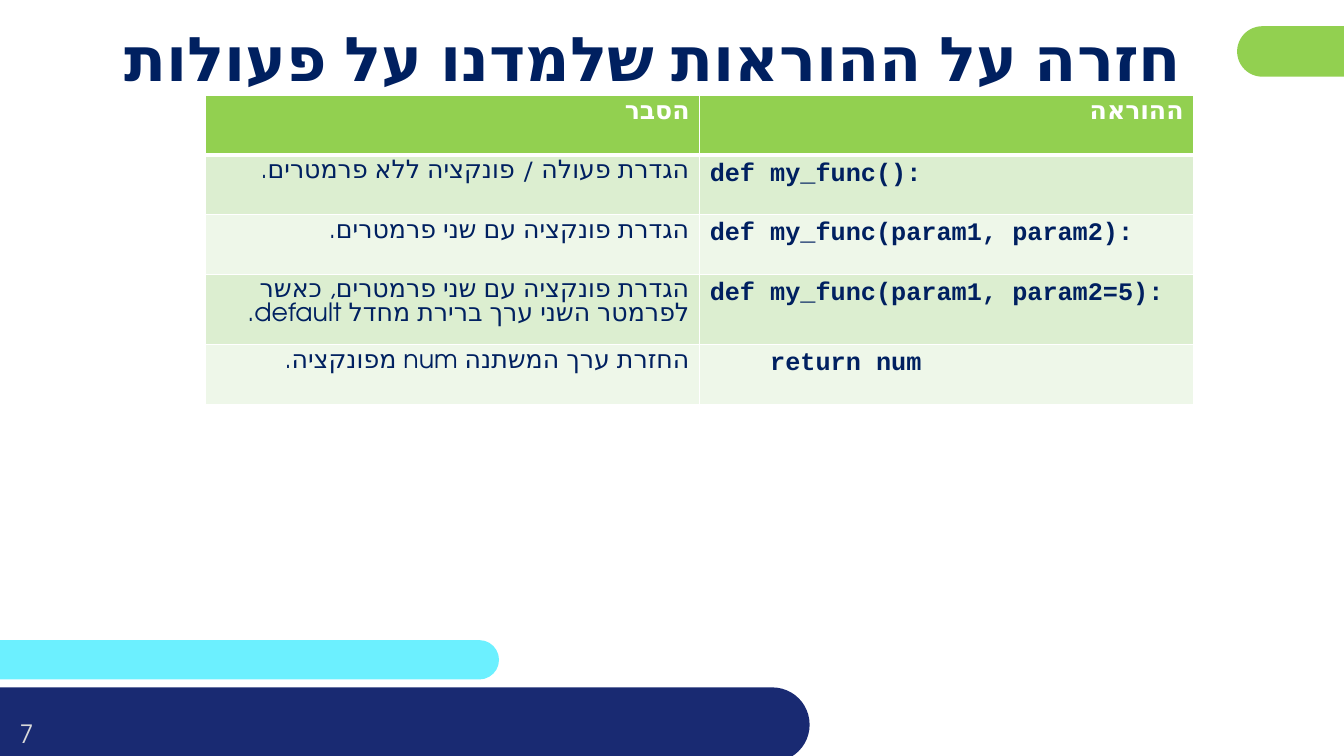
import dataclasses

import pptx
import pptx.dml.color
import pptx.enum.shapes
import pptx.enum.text
import pptx.oxml
import pptx.oxml.ns
import pptx.util

RGBColor = pptx.dml.color.RGBColor
ALIGN = pptx.enum.text.PP_ALIGN

WHITE = RGBColor(0xFF, 0xFF, 0xFF)
NAVY = RGBColor(0x00, 0x20, 0x60)
INDIGO = RGBColor(0x19, 0x2A, 0x72)
CYAN = RGBColor(0x6C, 0xF0, 0xFF)
GREEN = RGBColor(0x92, 0xD0, 0x50)
PALE_GREEN = RGBColor(0xDC, 0xEE, 0xD0)
PALEST_GREEN = RGBColor(0xEE, 0xF7, 0xE9)
LIGHT_GREY = RGBColor(0xD9, 0xD9, 0xD9)

SANS = "TeX Gyre Adventor"
MONO = "Courier New"
WIDTH = pptx.util.Inches(13.33)
HEIGHT = pptx.util.Inches(7.5)
CODE_INDENT = 4.5  # four monospaced characters, percent of slide width


@dataclasses.dataclass(frozen=True)
class Box:
    """A rectangle in percent of the slide's width and height."""
    left: float
    top: float
    width: float
    height: float

    def emu(self) -> tuple[int, int, int, int]:
        return (across(self.left), down(self.top),
                across(self.width), down(self.height))


@dataclasses.dataclass(frozen=True)
class Pill:
    box: Box
    color: RGBColor


@dataclasses.dataclass(frozen=True)
class Style:
    color: RGBColor
    size: float = 18
    font: str = SANS
    bold: bool = False
    align: ALIGN = ALIGN.RIGHT
    rtl: bool = True


@dataclasses.dataclass(frozen=True)
class Command:
    explanation: str
    code: str
    level: int = 0


PILLS = [
    Pill(Box(-1.95, 84.67, 39.08, 5.2), CYAN),
    Pill(Box(92.05, 3.47, 14.03, 6.67), GREEN),
    Pill(Box(-3.15, 90.93, 63.39, 9.87), INDIGO),
]
NUMBER_BOX = Box(-1.35, 93.2, 6.68, 7.6)
TITLE_BOX = Box(8.4, 2.27, 80.42, 10.53)
TABLE_BOX = Box(15.3, 12.67, 73.52, 39.33)

NUMBER = Style(LIGHT_GREY, align=ALIGN.CENTER, rtl=False)
TITLE = Style(NAVY, size=44, bold=True, align=ALIGN.CENTER)
HEADER = Style(WHITE, bold=True)
BODY = Style(NAVY)
CODE = Style(NAVY, font=MONO, bold=True, align=ALIGN.LEFT, rtl=False)

HEADINGS = ("הסבר", "ההוראה")
COMMANDS = [
    Command("הגדרת פעולה / פונקציה ללא פרמטרים.", "def my_func():"),
    Command("הגדרת פונקציה עם שני פרמטרים.", "def my_func(param1, param2):"),
    Command("הגדרת פונקציה עם שני פרמטרים, כאשר לפרמטר השני ערך ברירת מחדל default.",
            "def my_func(param1, param2=5):"),
    Command("החזרת ערך המשתנה num מפונקציה.", "return num", level=1),
]


def across(percent: float) -> int:
    return round(WIDTH * percent / 100)


def down(percent: float) -> int:
    return round(HEIGHT * percent / 100)


def write(tf, text: str, style: Style, level: int = 0) -> None:
    p = tf.paragraphs[0]
    p.alignment = style.align
    pPr = p._p.get_or_add_pPr()
    if style.rtl:
        pPr.set("rtl", "1")
    if level:
        pPr.set("marL", str(across(level * CODE_INDENT)))
    r = p.add_run()
    r.text = text
    formats = {"size": pptx.util.Pt(style.size), "bold": style.bold, "name": style.font}
    for name, value in formats.items():
        setattr(r.font, name, value)
    r.font.color.rgb = style.color
    rPr = r._r.get_or_add_rPr()
    rPr.set("lang", "he-IL" if style.rtl else "en-US")
    cs = pptx.oxml.parse_xml(f'<a:cs {pptx.oxml.ns.nsdecls("a")} typeface="{style.font}"/>')
    rPr.find(pptx.oxml.ns.qn("a:latin")).addnext(cs)


def add_pill(s, pill: Pill) -> None:
    sp = s.shapes.add_shape(pptx.enum.shapes.MSO_SHAPE.ROUNDED_RECTANGLE, *pill.box.emu())
    sp.adjustments[0] = 0.5
    sp.shadow.inherit = False
    sp.fill.solid()
    sp.fill.fore_color.rgb = pill.color
    sp.line.fill.background()


def add_text(s, box: Box, text: str, style: Style) -> None:
    tf = s.shapes.add_textbox(*box.emu()).text_frame
    inset = pptx.util.Inches(0.04)
    formats = {"word_wrap": True, "margin_left": inset, "margin_right": inset,
               "margin_top": 0, "margin_bottom": 0,
               "vertical_anchor": pptx.enum.text.MSO_ANCHOR.MIDDLE}
    for name, value in formats.items():
        setattr(tf, name, value)
    write(tf, text, style)


def set_borders(cell, top: float, bottom: float) -> None:
    """Draw white cell borders with widths in points, ahead of the fill."""
    tcPr = cell._tc.get_or_add_tcPr()
    widths = {"lnL": 1, "lnR": 1, "lnT": top, "lnB": bottom}
    for i, (side, width) in enumerate(widths.items()):
        tcPr.insert(i, pptx.oxml.parse_xml(
            f'<a:{side} {pptx.oxml.ns.nsdecls("a")} w="{pptx.util.Pt(width)}">'
            f'<a:solidFill><a:srgbClr val="{WHITE}"/></a:solidFill></a:{side}>'))


def fill_cell(cell, text: str, style: Style, fill: RGBColor, row: int, level: int = 0) -> None:
    write(cell.text_frame, text, style, level)
    cell.fill.solid()
    cell.fill.fore_color.rgb = fill
    set_borders(cell, top=3 if row == 1 else 1, bottom=3 if row == 0 else 1)


def add_command_table(s) -> None:
    rows = len(COMMANDS) + 1
    table = s.shapes.add_table(rows, len(HEADINGS), *TABLE_BOX.emu()).table
    for col, heading in enumerate(HEADINGS):
        fill_cell(table.cell(0, col), heading, HEADER, GREEN, 0)
    for row, command in enumerate(COMMANDS, start=1):
        fill = PALE_GREEN if row % 2 else PALEST_GREEN
        fill_cell(table.cell(row, 0), command.explanation, BODY, fill, row)
        fill_cell(table.cell(row, 1), command.code, CODE, fill, row, command.level)


def main() -> None:
    prs = pptx.Presentation()
    prs.slide_width, prs.slide_height = WIDTH, HEIGHT
    s = prs.slides.add_slide(prs.slide_layouts[6])
    for pill in PILLS:
        add_pill(s, pill)
    add_text(s, NUMBER_BOX, "7", NUMBER)
    add_text(s, TITLE_BOX, "חזרה על ההוראות שלמדנו על פעולות", TITLE)
    add_command_table(s)
    prs.save("out.pptx")


if __name__ == "__main__":
    main()
